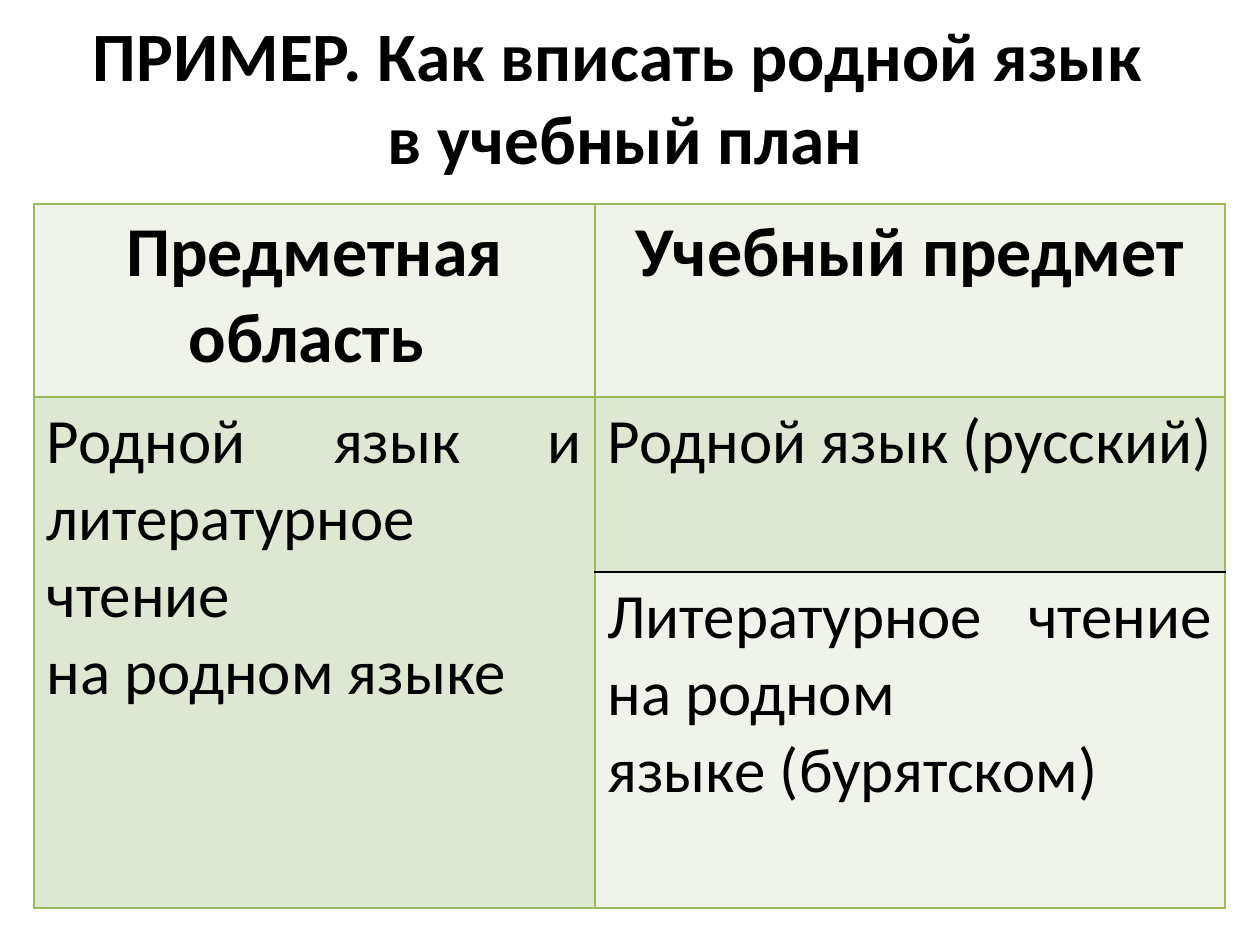
"""Build a slide with a curriculum table for native language subjects."""
from lxml.etree import SubElement
from pptx import Presentation
from pptx.dml.color import RGBColor
from pptx.enum.text import MSO_ANCHOR, PP_ALIGN
from pptx.oxml.ns import qn
from pptx.util import Pt

PX = 914400 // 126
FONT = "Calibri"
BLACK = RGBColor(0x00, 0x00, 0x00)
GREEN = RGBColor(0x9B, 0xBB, 0x59)
PALE = RGBColor(0xEF, 0xF3, 0xEA)
SAGE = RGBColor(0xDE, 0xE7, 0xD1)

COLUMNS = [561, 630]
ROWS = [193, 175, 336]
CELLS = [
    ["Предметная область ", "Учебный предмет"],
    ["Родной язык и литературное чтение\nна родном языке", "Родной язык (русский)"],
    ["", "Литературное чтение на родном\nязыке (бурятском)"],
]
FILLS = [[PALE, PALE], [SAGE, SAGE], [SAGE, PALE]]


def format_text(tf, size, bold, align):
    for p in tf.paragraphs:
        p.alignment = align
        for r in p.runs:
            r.font.name = FONT
            r.font.size = Pt(size)
            r.font.bold = bold
            r.font.color.rgb = BLACK


def add_title(slide, text, left, top, width, height):
    sp = slide.shapes.title
    sp.left, sp.top, sp.width, sp.height = (v * PX for v in (left, top, width, height))
    tf = sp.text_frame
    tf.text = text
    tf.vertical_anchor = MSO_ANCHOR.MIDDLE
    format_text(tf, 39.6, True, PP_ALIGN.CENTER)


def set_borders(cell, **colors):
    tcPr = cell._tc.get_or_add_tcPr()
    for side in "LRTB":
        ln = SubElement(tcPr, qn(f"a:ln{side}"), w=str(Pt(1)))
        fill = SubElement(ln, qn("a:solidFill"))
        SubElement(fill, qn("a:srgbClr"), val=str(colors.get(side, GREEN)))


def add_table(slide, left, top):
    frame = slide.shapes.add_table(len(ROWS), len(COLUMNS), left * PX, top * PX,
                                   sum(COLUMNS) * PX, sum(ROWS) * PX)
    table = frame.table
    for column, width in zip(table.columns, COLUMNS):
        column.width = width * PX
    for row, height in zip(table.rows, ROWS):
        row.height = height * PX
    table.cell(1, 0).merge(table.cell(2, 0))
    dividers = {(1, 1): {"B": BLACK}, (2, 1): {"T": BLACK}}
    for i, texts in enumerate(CELLS):
        for j, text in enumerate(texts):
            cell = table.cell(i, j)
            set_borders(cell, **dividers.get((i, j), {}))
            cell.fill.solid()
            cell.fill.fore_color.rgb = FILLS[i][j]
            cell.text_frame.text = text
            if i == 0:
                format_text(cell.text_frame, 40, True, PP_ALIGN.CENTER)
            else:
                format_text(cell.text_frame, 36, False, PP_ALIGN.JUSTIFY)


def main():
    prs = Presentation()
    prs.slide_width, prs.slide_height = 1260 * PX, 945 * PX
    slide = prs.slides.add_slide(prs.slide_layouts[5])
    add_title(slide, "ПРИМЕР. Как вписать родной язык \vв учебный план", 25, 16, 1201, 159)
    add_table(slide, 34, 204)
    prs.save("out.pptx")


if __name__ == "__main__":
    main()
